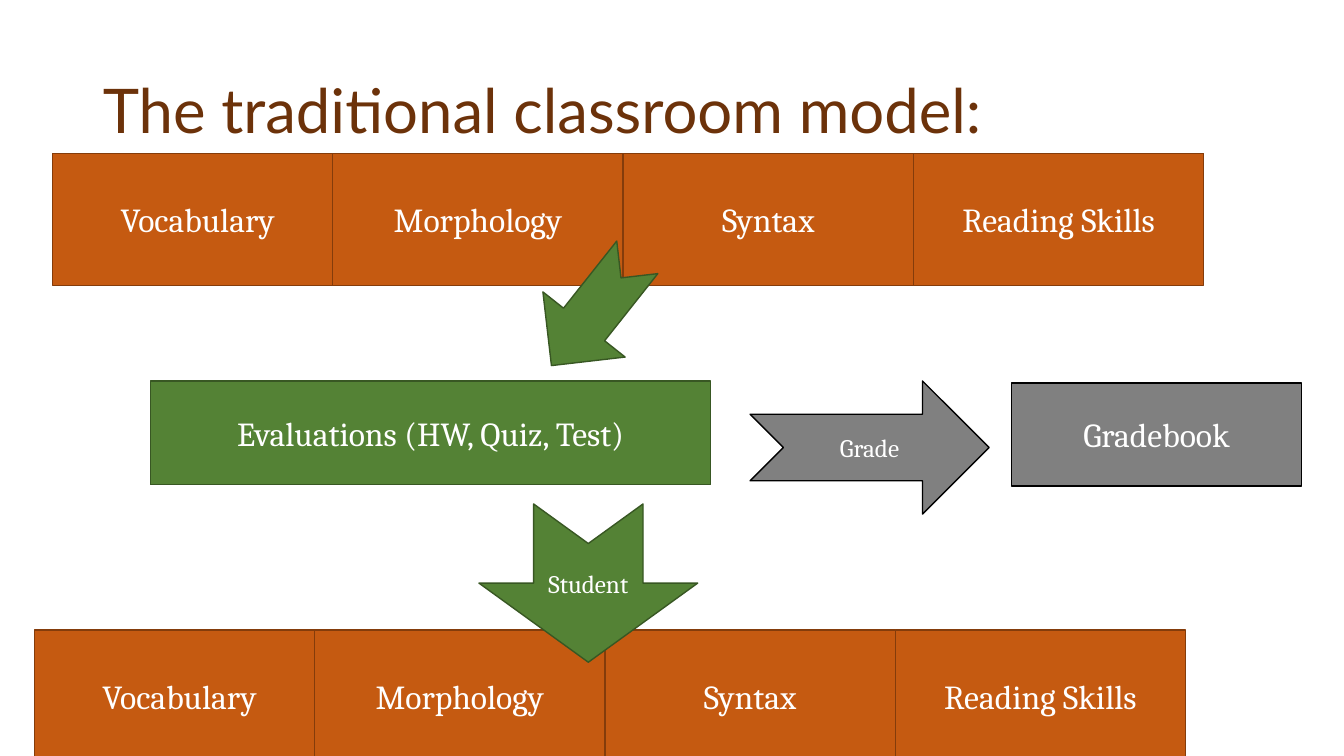
import pptx
import pptx.util
import pptx.dml.color
import pptx.enum.shapes
import pptx.enum.text

Inches, Pt = pptx.util.Inches, pptx.util.Pt
RGB = pptx.dml.color.RGBColor
KIND = pptx.enum.shapes.MSO_SHAPE
ALIGN = pptx.enum.text.PP_ALIGN
MIDDLE = pptx.enum.text.MSO_ANCHOR.MIDDLE

# Colours: (fill, line) pairs
ORANGE = RGB(0xC5, 0x5A, 0x11), RGB(0x84, 0x3C, 0x0B)
GREEN = RGB(0x54, 0x82, 0x35), RGB(0x38, 0x57, 0x23)
GRAY = RGB(0x80, 0x80, 0x80), RGB(0, 0, 0)
WHITE = RGB(0xFF, 0xFF, 0xFF)
BROWN = RGB(0x6C, 0x32, 0x0A)

# Content
TITLE = "The traditional classroom model:"
SKILLS = ["Vocabulary", "Morphology", "Syntax", "Reading Skills"]
RECT, ARROW = KIND.RECTANGLE, KIND.NOTCHED_RIGHT_ARROW
# text, kind, (left, top, width, height), colours, size, turn
STEPS = [
    ("Evaluations (HW, Quiz, Test)", RECT, (1.49, 3.78, 5.56, 1.03), GREEN, 24, 0),
    ("Grade", ARROW, (7.44, 3.78, 2.37, 1.32), GRAY, 18, 0),
    ("", ARROW, (5.21, 2.57, 1.37, 1.04), GREEN, 18, 128.4),
    ("Gradebook", RECT, (10.03, 3.8, 2.88, 1.02), GRAY, 24, 0),
]
STUDENT = ("Student", ARROW, (5.05, 4.7, 1.57, 2.17), GREEN, 18, 90)

# Skill rows: grid origin, column width, row height, shift of the first box
ROWS = [(0.42, 1.52), (0.24, 6.25)]
COL, HIGH, SHIFT = 2.88, 1.31, 0.1


def style(text, words, align, form):
    text.word_wrap = True
    text.vertical_anchor = MIDDLE
    para = text.paragraphs[0]
    para.alignment = align
    run = para.add_run()
    run.text = words
    run.font.color.rgb = form.pop("color")
    for key, value in form.items():
        setattr(run.font, key, value)
    return para


def draw(words, kind, box, tones, size, turn):
    shape = slide.shapes.add_shape(kind, *map(Inches, box))
    shape.shadow.inherit = False
    shape.rotation = turn
    shape.fill.solid()
    shape.fill.fore_color.rgb, shape.line.color.rgb = tones
    shape.line.width = Pt(1)
    if words:
        style(shape.text_frame, words, ALIGN.CENTER,
              {"name": "Cambria", "size": Pt(size), "color": WHITE})
    return shape


def draw_row(left, top):
    for col, skill in enumerate(SKILLS):
        x = left + col * COL + (0 if col else SHIFT)
        draw(skill, RECT, (x, top, COL, HIGH), ORANGE, 24, 0)


deck = pptx.Presentation()
deck.slide_width, deck.slide_height = Inches(13.33), Inches(7.5)
slide = deck.slides.add_slide(deck.slide_layouts[5])

# Title
title = slide.shapes.title
place = dict(left=0.92, top=0.4, width=11.5, height=1.45)
for key, value in place.items():
    setattr(title, key, Inches(value))
para = style(title.text_frame, TITLE, ALIGN.LEFT,
             {"name": "Lato", "size": Pt(44), "color": BROWN})
para.line_spacing = 0.9

# Upper row, evaluation steps, lower row
draw_row(*ROWS[0])
for step in STEPS:
    draw(*step)
draw_row(*ROWS[1])

# Down arrow, its text turned back upright
down = draw(*STUDENT)
down.text_frame._txBody.bodyPr.set("vert", "vert270")

deck.save("out.pptx")
